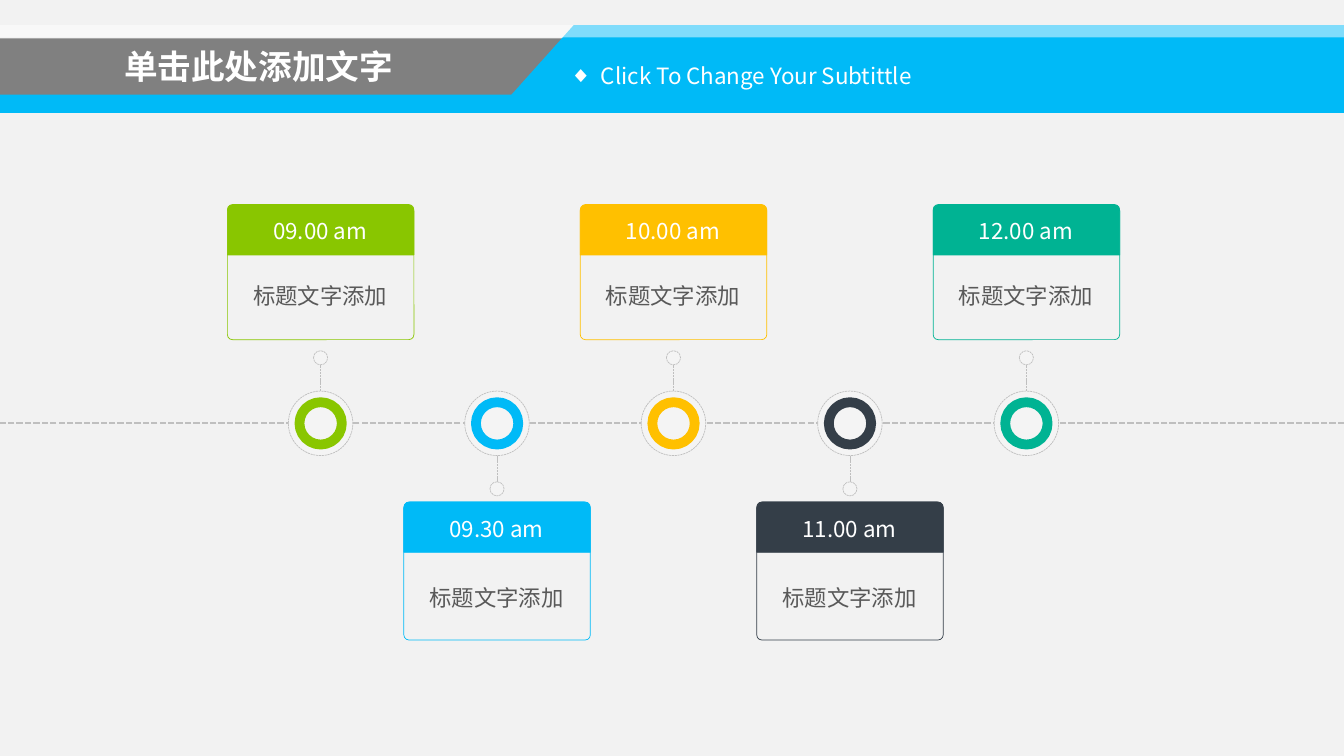
from lxml import etree
from pptx import Presentation
from pptx.dml.color import RGBColor
from pptx.enum.dml import MSO_LINE
from pptx.enum.shapes import MSO_CONNECTOR, MSO_SHAPE
from pptx.enum.text import MSO_ANCHOR, MSO_AUTO_SIZE, PP_ALIGN
from pptx.oxml.ns import qn
from pptx.util import Inches, Pt

RECT, OVAL = MSO_SHAPE.RECTANGLE, MSO_SHAPE.OVAL
CARD, CARD_HEAD = MSO_SHAPE.ROUNDED_RECTANGLE, MSO_SHAPE.ROUND_2_SAME_RECTANGLE
DASH = MSO_LINE.SQUARE_DOT
FONT = "Noto Sans CJK SC"
COLORS = {
    "page": "F2F2F2", "white": "FFFFFF", "disc": "F4F4F4", "rule": "BFBFBF",
    "bar": "808080", "text": "595959", "blue": "00BAF7", "green": "89C600",
    "yellow": "FFC000", "navy": "343E48", "teal": "00B393",
}
WIDTH, HEIGHT = 13.33, 7.5
FIRST_X, STEP_X, AXIS_Y = 3.18, 1.75, 4.2
CARD_WIDTH, HEAD_HEIGHT = 1.85, 0.5
RING, DOT = 0.64, 0.14
STEM = 0.26

# time, colour
STOPS = [
    ("09.00 am", "green"),
    ("09.30 am", "blue"),
    ("10.00 am", "yellow"),
    ("11.00 am", "navy"),
    ("12.00 am", "teal"),
]


def add_box(kind, left, top, width, height, fill=None, line=None, points=0.5, dash=None):
    """Add a preset shape without shadow; fill and line are keys of COLORS."""
    shape = slide.shapes.add_shape(kind, Inches(left), Inches(top), Inches(width), Inches(height))
    shape.shadow.inherit = False
    if fill:
        shape.fill.solid()
        shape.fill.fore_color.rgb = RGBColor.from_string(COLORS[fill])
    else:
        shape.fill.background()
    if line:
        shape.line.color.rgb = RGBColor.from_string(COLORS[line])
        shape.line.width = Pt(points)
        shape.line.dash_style = dash
    else:
        shape.line.fill.background()
    return shape


def write(box, text, size, color, latin=FONT, bold=False):
    """Set the text of a box as one formatted paragraph and return it."""
    box.text_frame.text = text
    para = box.text_frame.paragraphs[0]
    font = para.runs[0].font
    font.size, font.bold, font.name = Pt(size), bold, latin
    font.color.rgb = RGBColor.from_string(COLORS[color])
    etree.SubElement(para.runs[0]._r.get_or_add_rPr(), qn("a:ea"), typeface=FONT)
    return para


deck = Presentation()
deck.slide_width, deck.slide_height = Inches(WIDTH), Inches(HEIGHT)
slide = deck.slides.add_slide(deck.slide_layouts[1])
slide.background.fill.solid()
slide.background.fill.fore_color.rgb = RGBColor.from_string(COLORS["page"])

# Header band
add_box(RECT, 0, 0.56, WIDTH, 0.56, "blue")
add_box(RECT, 0, 0.38, WIDTH, 0.56, "bar")
corners = [(Inches(x), Inches(y)) for x, y in
           [(5.69, 0.25), (WIDTH, 0.25), (WIDTH, 1.11), (4.92, 1.11)]]
outline = slide.shapes.build_freeform(*corners[0])
outline.add_line_segments(corners[1:], close=True)
slant = outline.convert_to_shape()
slant.shadow.inherit = False
slant.fill.solid()
slant.fill.fore_color.rgb = RGBColor.from_string(COLORS["blue"])
slant.line.fill.background()
strip = add_box(RECT, 0, 0.25, WIDTH, 0.12, "white")
strip_color = strip.fill._xPr.find(qn("a:solidFill"))[0]
etree.SubElement(strip_color, qn("a:alpha"), val="50000")

# Time axis and the stems between rings and dots
centers = [FIRST_X + STEP_X * i for i in range(len(STOPS))]
sides = [-1 if i % 2 == 0 else 1 for i in range(len(STOPS))]
lines = [(WIDTH, AXIS_Y, 0, AXIS_Y, 1.5)]
for x, side in zip(centers, sides):
    ring_edge = AXIS_Y + side * RING / 2
    lines.append((x, ring_edge, x, ring_edge + side * STEM, 0.5))
for x1, y1, x2, y2, points in lines:
    connector = slide.shapes.add_connector(
        MSO_CONNECTOR.STRAIGHT, Inches(x1), Inches(y1), Inches(x2), Inches(y2))
    connector.line.color.rgb = RGBColor.from_string(COLORS["rule"])
    connector.line.width = Pt(points)
    connector.line.dash_style = DASH
    etree.SubElement(connector._element.spPr, qn("a:effectLst"))

# Rings, dots and cards
for (time, color), x, side in zip(STOPS, centers, sides):
    dot_y = AXIS_Y + side * (RING / 2 + STEM + DOT / 2)
    for diameter, y in [(DOT, dot_y), (RING, AXIS_Y)]:
        add_box(OVAL, x - diameter / 2, y - diameter / 2, diameter, diameter,
                "disc", "rule", 0.5, DASH)
    add_box(OVAL, x - 0.21, AXIS_Y - 0.21, 0.42, 0.42, "disc", color, 7)

    top, height, caption_drop = (2.03, 1.34, 0.72) if side < 0 else (4.98, 1.37, 0.77)
    left = x - CARD_WIDTH / 2
    frame = add_box(CARD, left, top, CARD_WIDTH, height, line=color)
    frame.adjustments[0] = 0.038
    head = add_box(CARD_HEAD, left, top, CARD_WIDTH, HEAD_HEIGHT, color, color)
    head.adjustments[0] = 0.125
    for text, drop, text_color in [(time, 0.08, "white"), ("标题文字添加", caption_drop, "text")]:
        label = slide.shapes.add_textbox(
            Inches(left + 0.01), Inches(top + drop), Inches(1.82), Inches(0.37))
        label.text_frame.word_wrap = True
        label.text_frame.auto_size = MSO_AUTO_SIZE.SHAPE_TO_FIT_TEXT
        write(label, text, 16, text_color).alignment = PP_ALIGN.CENTER

# Title and subtitle, brought in front of the header band
title, subtitle = slide.placeholders
for holder, place, inset in [(title, (1.16, 0.42, 3.77, 0.47), (0.07, 0.03)),
                             (subtitle, (5.49, 0.51, 6.37, 0.46), (0.16, 0.08))]:
    holder.left, holder.top, holder.width, holder.height = map(Inches, place)
    words = holder.text_frame
    words.margin_left = words.margin_right = Inches(inset[0])
    words.margin_top = words.margin_bottom = Inches(inset[1])
    words.vertical_anchor = MSO_ANCHOR.MIDDLE
    words.auto_size = MSO_AUTO_SIZE.NONE
    words.word_wrap = True
    holder._element.getparent().append(holder._element)

write(title, "单击此处添加文字", 24, "white", "Lato", True).alignment = PP_ALIGN.LEFT
para = write(subtitle, "Click To Change Your Subtittle", 16, "white")
para.line_spacing = 1.1
para.space_before = Pt(3.2)
props = para._p.get_or_add_pPr()
props.set("marL", str(Inches(0.31)))
props.set("indent", str(-Inches(0.31)))
etree.SubElement(props, qn("a:buChar"), char="◆")

deck.save("out.pptx")
